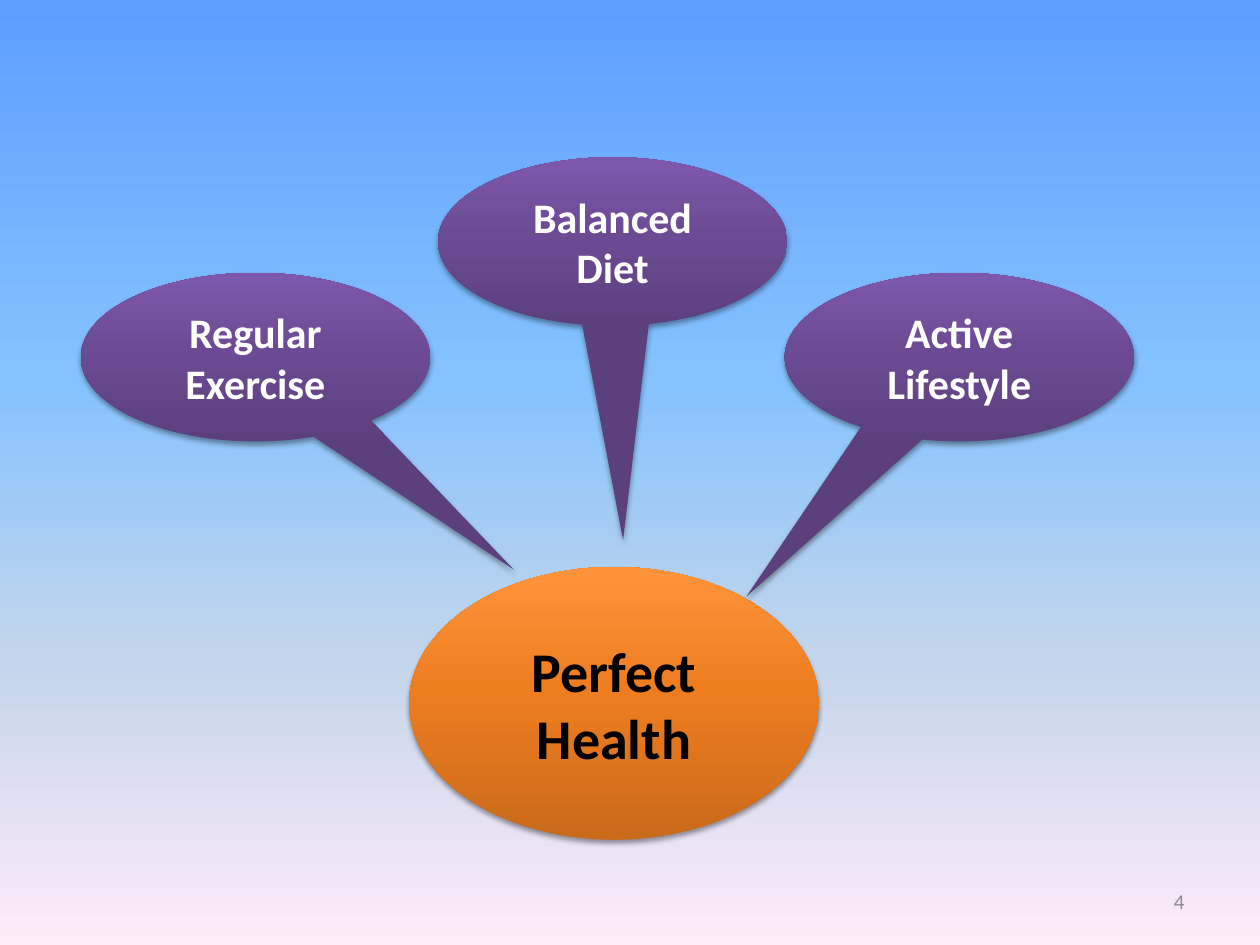
from dataclasses import dataclass

from lxml.etree import SubElement
from pptx import Presentation
from pptx.dml.color import RGBColor
from pptx.enum.shapes import MSO_SHAPE
from pptx.enum.text import MSO_ANCHOR, PP_ALIGN
from pptx.oxml.ns import qn
from pptx.util import Cm, Pt


@dataclass(frozen=True)
class Theme:
    font: str = "Calibri"
    goal_size: int = 32
    habit_size: int = 24
    number_size: int = 12
    goal_text: str = "000000"
    habit_text: str = "FFFFFF"
    number_text: str = "8C8C8C"
    shadow: str = "000000"
    sky: tuple = ((0, "5E9EFF"), (40, "85C2FF"), (70, "C4D6EB"), (100, "FFEBFA"))
    orange: tuple = ((0, "CA6A1B"), (55, "EE7D20"), (100, "FF943B"))
    purple: tuple = ((0, "5C407E"), (55, "6C4B94"), (100, "7E58AC"))


class SlideBuilder:
    def __init__(self, slide, theme):
        self.slide = slide
        self.theme = theme

    def gradient(self, fill, owner, stops, angle):
        """Fill with any number of (percent, colour) stops; angle is counter-clockwise."""
        fill.gradient()
        fill.gradient_angle = angle
        stop_list = next(owner.iter(qn("a:gsLst")))
        stop_list.clear()
        for percent, colour in stops:
            stop = SubElement(stop_list, qn("a:gs"), pos=str(percent * 1000))
            SubElement(stop, qn("a:srgbClr"), val=colour)

    def background(self):
        self.gradient(self.slide.background.fill, self.slide.element, self.theme.sky, 270)

    def shadow(self, shape):
        shape.shadow.inherit = False
        effects = next(shape.element.iter(qn("a:effectLst")))
        outer = SubElement(effects, qn("a:outerShdw"), blurRad=str(Pt(3.1)),
                           dist=str(Pt(2)), dir="5400000", rotWithShape="0")
        colour = SubElement(outer, qn("a:srgbClr"), val=self.theme.shadow)
        SubElement(colour, qn("a:alpha"), val="38000")

    def text(self, shape, words, size, colour, align=PP_ALIGN.CENTER, bold=True):
        frame = shape.text_frame
        frame.word_wrap = True
        frame.vertical_anchor = MSO_ANCHOR.MIDDLE
        paragraph = frame.paragraphs[0]
        paragraph.alignment = align
        run = paragraph.add_run()
        run.text = words
        run.font.name = self.theme.font
        run.font.size = Pt(size)
        run.font.bold = bold
        run.font.color.rgb = RGBColor.from_string(colour)

    def bubble(self, preset, box, stops, words, size, colour):
        shape = self.slide.shapes.add_shape(preset, *map(Cm, box))
        self.gradient(shape.fill, shape.element, stops, 90)
        shape.line.fill.background()
        self.shadow(shape)
        self.text(shape, words, size, colour)
        return shape

    def goal(self, words, box):
        self.bubble(MSO_SHAPE.OVAL, box, self.theme.orange, words,
                    self.theme.goal_size, self.theme.goal_text)

    def habit(self, words, box, tip):
        """Speech bubble whose tip is given as a share of its size, from its centre."""
        callout = self.bubble(MSO_SHAPE.OVAL_CALLOUT, box, self.theme.purple, words,
                              self.theme.habit_size, self.theme.habit_text)
        callout.adjustments[0], callout.adjustments[1] = tip

    def slide_number(self, number, box):
        label = self.slide.shapes.add_textbox(*map(Cm, box))
        self.text(label, number, self.theme.number_size, self.theme.number_text,
                  PP_ALIGN.RIGHT, bold=False)


def main():
    deck = Presentation()
    deck.slide_width, deck.slide_height = Cm(25.4), Cm(19.05)
    builder = SlideBuilder(deck.slides.add_slide(deck.slide_layouts[6]), Theme())

    builder.background()
    builder.slide_number("4", (18.2, 17.66, 5.93, 1.01))
    builder.goal("Perfect Health", (8.25, 11.43, 8.26, 5.5))

    habit_width, habit_height = 7.04, 3.4
    side_top, middle_top = 5.5, 3.17
    habits = (
        ("Regular Exercise", 1.63, side_top, (0.74, 1.26)),
        ("Balanced Diet", 8.83, middle_top, (0.03, 1.77)),
        ("Active Lifestyle", 15.82, side_top, (-0.61, 1.42)),
    )
    for words, left, top, tip in habits:
        builder.habit(words, (left, top, habit_width, habit_height), tip)

    deck.save("out.pptx")


if __name__ == "__main__":
    main()
